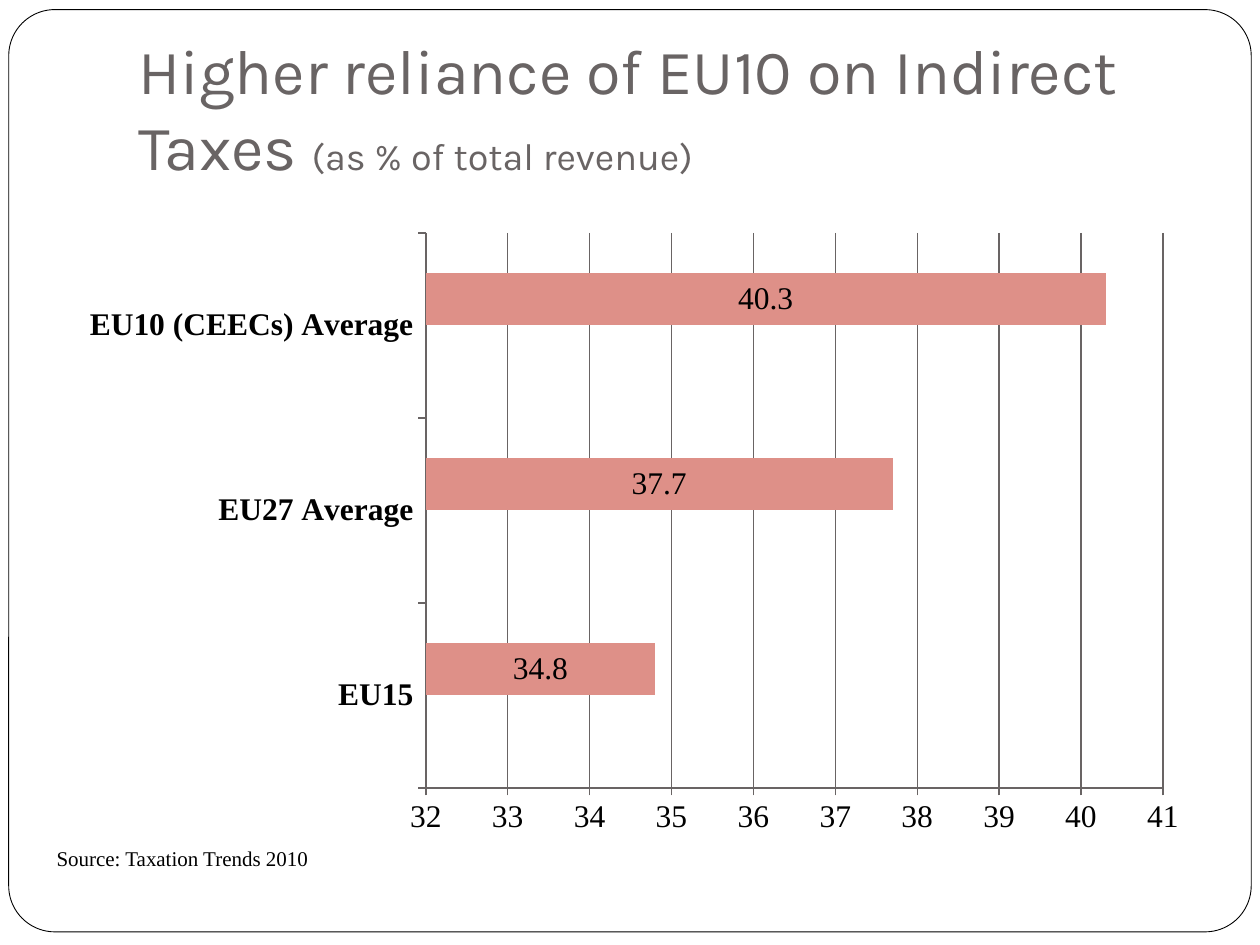
from dataclasses import dataclass

from lxml.etree import SubElement
from pptx import Presentation
from pptx.chart.data import CategoryChartData as ChartData
from pptx.dml.color import RGBColor as Color
from pptx.enum.chart import XL_CHART_TYPE as ChartType
from pptx.enum.chart import XL_LABEL_POSITION as LabelPosition
from pptx.enum.chart import XL_TICK_MARK as TickMark
from pptx.enum.shapes import MSO_SHAPE as Shape
from pptx.enum.text import MSO_ANCHOR as Anchor
from pptx.oxml.ns import qn
from pptx.util import Pt


@dataclass(frozen=True)
class Theme:
    title_font: str = "Karla"
    body_font: str = "Times New Roman"
    paper: str = "FFFFFF"
    ink: str = "000000"
    title: str = "696464"
    grid: str = "696464"
    empty_bar: str = "D34817"
    bar: str = "DE9088"
    title_size: float = 36
    subtitle_size: float = 21.6
    chart_size: float = 18
    source_size: float = 12


class SlideBuilder:
    def __init__(self, slide, theme):
        self.slide = slide
        self.theme = theme

    def frame(self, box, radius):
        shape = self.slide.shapes.add_shape(Shape.ROUNDED_RECTANGLE, *map(Pt, box))
        shape.adjustments[0] = radius
        shape.shadow.inherit = False
        shape.fill.solid()
        shape.fill.fore_color.rgb = Color.from_string(self.theme.paper)
        shape.line.color.rgb = Color.from_string(self.theme.ink)
        shape.line.width = Pt(0.5)

    def text(self, box, runs, font, color, anchor=Anchor.TOP, bottom_inset=3.6):
        shape = self.slide.shapes.add_textbox(*map(Pt, box))
        text_frame = shape.text_frame
        text_frame.word_wrap = True
        text_frame.vertical_anchor = anchor
        text_frame.margin_bottom = Pt(bottom_inset)
        paragraph = text_frame.paragraphs[0]
        for words, size in runs:
            run = paragraph.add_run()
            run.text = words
            run.font.name = font
            run.font.size = Pt(size)
            run.font.color.rgb = Color.from_string(color)

    def bar_chart(self, box, categories, series, scale, plot_layout):
        data = ChartData()
        data.categories = categories
        for name, values, _ in series:
            data.add_series(name, values)
        chart = self.slide.shapes.add_chart(
            ChartType.BAR_CLUSTERED, *map(Pt, box), data
        ).chart
        chart.has_legend = False
        chart.has_title = False
        chart.font.name = self.theme.body_font
        chart.font.size = Pt(self.theme.chart_size)
        chart.font.color.rgb = Color.from_string(self.theme.ink)

        plot = chart.plots[0]
        plot.gap_width = 150
        plot.overlap = 0
        plot.vary_by_categories = False
        for bars, (_, _, color) in zip(plot.series, series):
            bars.format.fill.solid()
            bars.format.fill.fore_color.rgb = Color.from_string(color)
        labels = plot.series[-1].data_labels
        labels.show_value = True
        labels.position = LabelPosition.CENTER

        value_axis, category_axis = chart.value_axis, chart.category_axis
        value_axis.minimum_scale, value_axis.maximum_scale = scale
        value_axis.major_unit = 1
        value_axis.has_major_gridlines = True
        category_axis.tick_labels.font.bold = True
        for axis in (value_axis, category_axis):
            axis.major_tick_mark = TickMark.OUTSIDE
            axis.minor_tick_mark = TickMark.NONE
        for line in (
            value_axis.format.line,
            category_axis.format.line,
            value_axis.major_gridlines.format.line,
        ):
            line.color.rgb = Color.from_string(self.theme.grid)
            line.width = Pt(0.75)
        self.place_plot(chart, plot_layout)

    def place_plot(self, chart, plot_layout):
        area = chart.element.find(".//" + qn("c:plotArea"))
        layout = area.find(qn("c:layout"))
        if layout is None:
            layout = SubElement(area, qn("c:layout"))
            area.insert(0, layout)
        manual = SubElement(layout, qn("c:manualLayout"))
        settings = [("layoutTarget", "inner"), ("xMode", "edge"), ("yMode", "edge")]
        settings += zip("xywh", map(str, plot_layout))
        for tag, value in settings:
            SubElement(manual, qn("c:" + tag)).set("val", value)


def main():
    theme = Theme()
    presentation = Presentation()
    presentation.slide_width, presentation.slide_height = Pt(720), Pt(540)
    slide = presentation.slides.add_slide(presentation.slide_layouts[6])
    builder = SlideBuilder(slide, theme)

    builder.frame((5, 5.5, 710, 527), 0.05)
    builder.text(
        (72, 21.6, 612, 90),
        [
            ("Higher reliance of EU10 on Indirect Taxes ", theme.title_size),
            ("(as % of total revenue)", theme.subtitle_size),
        ],
        theme.title_font,
        theme.title,
        Anchor.BOTTOM,
        7.2,
    )
    builder.bar_chart(
        (36, 126, 648, 356.4),
        ["EU15", "EU27 Average", "EU10 (CEECs) Average"],
        [
            ("Series 1", [None, None, None], theme.empty_bar),
            ("Series 2", [34.8, 37.7, 40.3], theme.bar),
        ],
        (32, 41),
        (0.32, 0.02, 0.65, 0.89),
    )
    builder.text(
        (25.2, 479.5, 193, 21.6),
        [("Source: Taxation Trends 2010", theme.source_size)],
        theme.body_font,
        theme.ink,
    )
    presentation.save("out.pptx")


if __name__ == "__main__":
    main()
